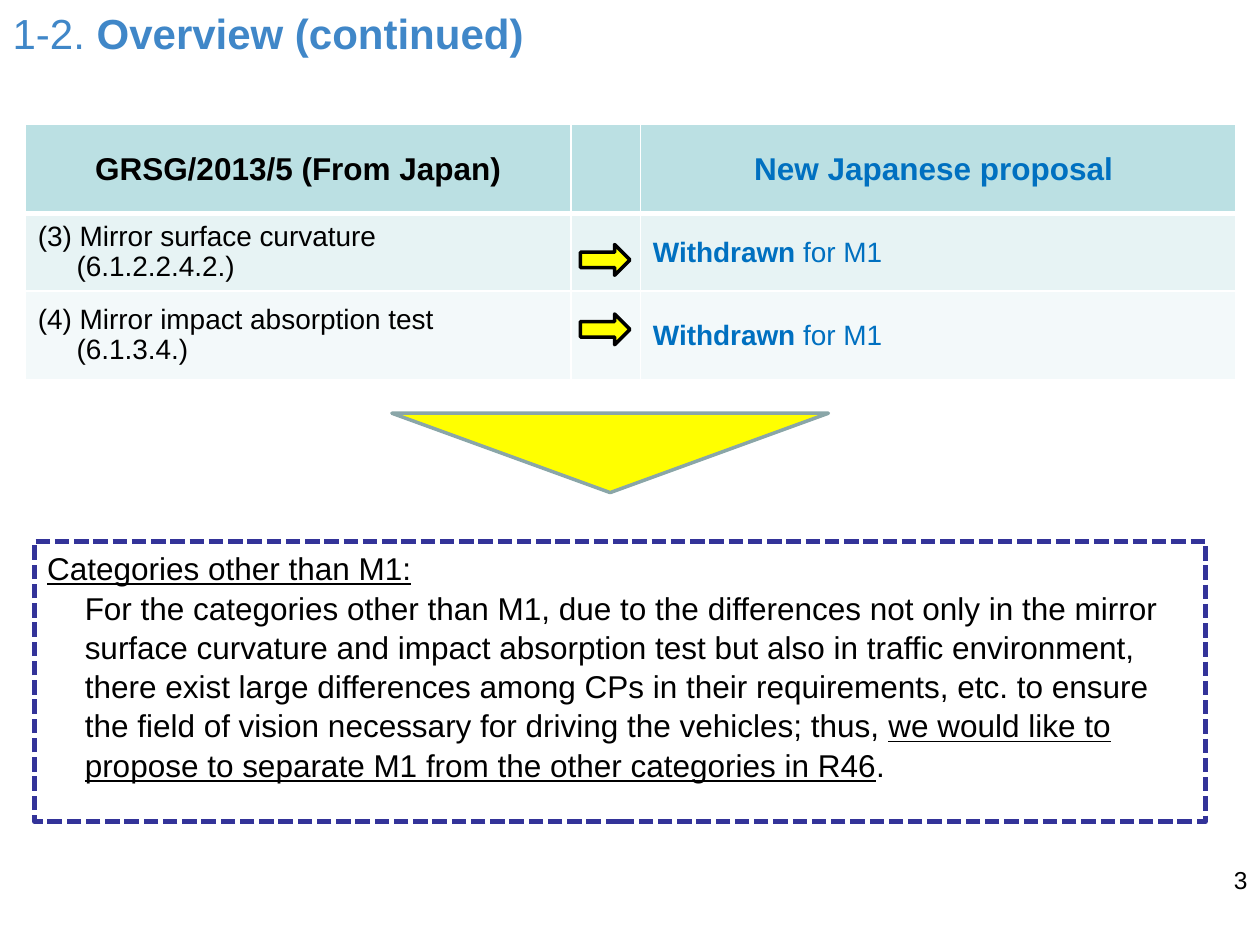
from dataclasses import dataclass
from typing import Optional

from lxml.etree import SubElement
from pptx import Presentation
from pptx.dml.color import RGBColor
from pptx.enum.dml import MSO_LINE
from pptx.enum.shapes import MSO_SHAPE
from pptx.enum.text import MSO_ANCHOR, MSO_AUTO_SIZE, PP_ALIGN
from pptx.oxml.ns import qn
from pptx.util import Cm, Pt


@dataclass(frozen=True)
class Theme:
    font: str = "Arial"
    black: str = "000000"
    white: str = "FFFFFF"
    title: str = "4087C8"
    proposal: str = "0070C0"
    header_fill: str = "BBE0E3"
    row_fills: tuple = ("E7F3F4", "F3F9FA")
    arrow_fill: str = "FFFF00"
    triangle_line: str = "8AA6A8"
    frame: str = "333399"
    title_size: int = 24
    text_size: int = 18
    cell_size: int = 16
    number_size: int = 14


@dataclass(frozen=True)
class Box:
    """Position and size in centimetres."""
    left: float
    top: float
    width: float
    height: float

    def lengths(self) -> tuple:
        return Cm(self.left), Cm(self.top), Cm(self.width), Cm(self.height)


@dataclass(frozen=True)
class Item:
    """A withdrawn item, with its paragraph number in the regulation."""
    subject: str
    clause: str
    arrow_top: float


THEME = Theme()
TABLE_BOX = Box(0.51, 2.51, 24.4, 5.1)
COLUMN_WIDTHS = (11, 1.4, 12)
ROW_HEIGHTS = (1.8, 1.5, 1.8)
CLAUSE_INDENT = 0.78
ITEMS = (
    Item("(3) Mirror surface curvature", "(6.1.2.2.4.2.)", 4.93),
    Item("(4) Mirror impact absorption test", "(6.1.3.4.)", 6.33),
)


def add_text(paragraph, text: str, *, size: int, color: str = THEME.black,
             bold: bool = False, underline: bool = False) -> None:
    run = paragraph.add_run()
    run.text = text
    font = run.font
    font.name, font.size = THEME.font, Pt(size)
    font.bold, font.underline = bold, underline
    font.color.rgb = RGBColor.from_string(color)


def indent_left(paragraph, centimetres: float) -> None:
    properties = paragraph._p.get_or_add_pPr()
    properties.set("marL", str(Cm(centimetres)))
    properties.set("indent", "0")


def add_outlined_shape(slide, kind, box: Box, *, line: str, width: float,
                       fill: Optional[str] = None):
    shape = slide.shapes.add_shape(kind, *box.lengths())
    shape.shadow.inherit = False
    if fill:
        shape.fill.solid()
        shape.fill.fore_color.rgb = RGBColor.from_string(fill)
    else:
        shape.fill.background()
    shape.line.color.rgb = RGBColor.from_string(line)
    shape.line.width = Pt(width)
    return shape


def format_cell(cell, fill: str, bottom_width: float = 1) -> None:
    properties = cell._tc.get_or_add_tcPr()
    widths = {"a:lnL": 1, "a:lnR": 1, "a:lnT": 1, "a:lnB": bottom_width}
    for tag, width in widths.items():
        line = SubElement(properties, qn(tag), w=str(Pt(width)))
        line_fill = SubElement(line, qn("a:solidFill"))
        SubElement(line_fill, qn("a:srgbClr"), val=THEME.white)
    cell.fill.solid()
    cell.fill.fore_color.rgb = RGBColor.from_string(fill)
    cell.vertical_anchor = MSO_ANCHOR.MIDDLE


def add_title(slide) -> None:
    title = slide.shapes.title
    title.left, title.top, title.width, title.height = Box(0, 0, 21.9, 1.32).lengths()
    frame = title.text_frame
    frame.auto_size = MSO_AUTO_SIZE.NONE
    frame.vertical_anchor = MSO_ANCHOR.MIDDLE
    paragraph = frame.paragraphs[0]
    paragraph.alignment = PP_ALIGN.LEFT
    style = dict(size=THEME.title_size, color=THEME.title)
    add_text(paragraph, "1-2. ", **style)
    add_text(paragraph, "Overview (continued)", bold=True, **style)


def add_comparison_table(slide) -> None:
    table = slide.shapes.add_table(
        len(ROW_HEIGHTS), len(COLUMN_WIDTHS), *TABLE_BOX.lengths()).table
    table.first_row = table.horz_banding = False
    for column, width in zip(table.columns, COLUMN_WIDTHS):
        column.width = Cm(width)
    for row, height in zip(table.rows, ROW_HEIGHTS):
        row.height = Cm(height)

    for cell in table.rows[0].cells:
        format_cell(cell, THEME.header_fill, bottom_width=3)
    headings = ((0, "GRSG/2013/5 (From Japan)", THEME.black),
                (2, "New Japanese proposal ", THEME.proposal))
    for column, heading, color in headings:
        paragraph = table.cell(0, column).text_frame.paragraphs[0]
        paragraph.alignment = PP_ALIGN.CENTER
        add_text(paragraph, heading, size=THEME.text_size, color=color, bold=True)

    for row, (item, fill) in enumerate(zip(ITEMS, THEME.row_fills), start=1):
        subject_cell, _, proposal_cell = cells = list(table.rows[row].cells)
        for cell in cells:
            format_cell(cell, fill)
        subject = subject_cell.text_frame.paragraphs[0]
        clause = subject_cell.text_frame.add_paragraph()
        indent_left(clause, CLAUSE_INDENT)
        for paragraph, text in ((subject, item.subject), (clause, item.clause)):
            paragraph.line_spacing = 0.96
            add_text(paragraph, text, size=THEME.cell_size)
        proposal = proposal_cell.text_frame.paragraphs[0]
        style = dict(size=THEME.cell_size, color=THEME.proposal)
        add_text(proposal, "Withdrawn", bold=True, **style)
        add_text(proposal, " for M1", **style)


def add_arrows(slide) -> None:
    triangle = add_outlined_shape(
        slide, MSO_SHAPE.ISOSCELES_TRIANGLE, Box(7.9, 8.33, 8.8, 1.6),
        line=THEME.triangle_line, width=2, fill=THEME.arrow_fill)
    triangle.rotation = 180
    for item in ITEMS:
        add_outlined_shape(
            slide, MSO_SHAPE.RIGHT_ARROW, Box(11.7, item.arrow_top, 1, 0.62),
            line=THEME.black, width=2, fill=THEME.arrow_fill)


def add_conclusion(slide) -> None:
    shape = add_outlined_shape(slide, MSO_SHAPE.RECTANGLE, Box(0.7, 10.92, 23.6, 5.64),
                               line=THEME.frame, width=2.75)
    shape.line.dash_style = MSO_LINE.SQUARE_DOT
    frame = shape.text_frame
    frame.word_wrap = True
    frame.vertical_anchor = MSO_ANCHOR.TOP
    heading, body = frame.paragraphs[0], frame.add_paragraph()
    indent_left(body, 0.76)
    for paragraph in (heading, body):
        paragraph.alignment = PP_ALIGN.LEFT
        paragraph.line_spacing = 1.04
    size = THEME.text_size
    add_text(heading, "Categories other than M1:", size=size, underline=True)
    add_text(body, "For the categories other than M1, due to the differences not only in "
             "the mirror surface curvature and impact absorption test but also in traffic "
             "environment, there exist large differences among CPs in their requirements, "
             "etc. to ensure the field of vision necessary for driving the vehicles; thus, ",
             size=size)
    add_text(body, "we would like to propose to separate M1 from the other categories in R46",
             size=size, underline=True)
    add_text(body, ".", size=size)


def add_page_number(slide) -> None:
    text_box = slide.shapes.add_textbox(*Box(19.48, 17.32, 5.92, 1.32).lengths())
    text_box.text_frame.word_wrap = True
    paragraph = text_box.text_frame.paragraphs[0]
    paragraph.alignment = PP_ALIGN.RIGHT
    add_text(paragraph, "3", size=THEME.number_size)


def main() -> None:
    presentation = Presentation()
    presentation.slide_width, presentation.slide_height = Cm(25.4), Cm(19.05)
    slide = presentation.slides.add_slide(presentation.slide_layouts.get_by_name("Title Only"))
    for add_part in (add_title, add_page_number, add_comparison_table, add_arrows, add_conclusion):
        add_part(slide)
    presentation.save("out.pptx")


if __name__ == "__main__":
    main()
